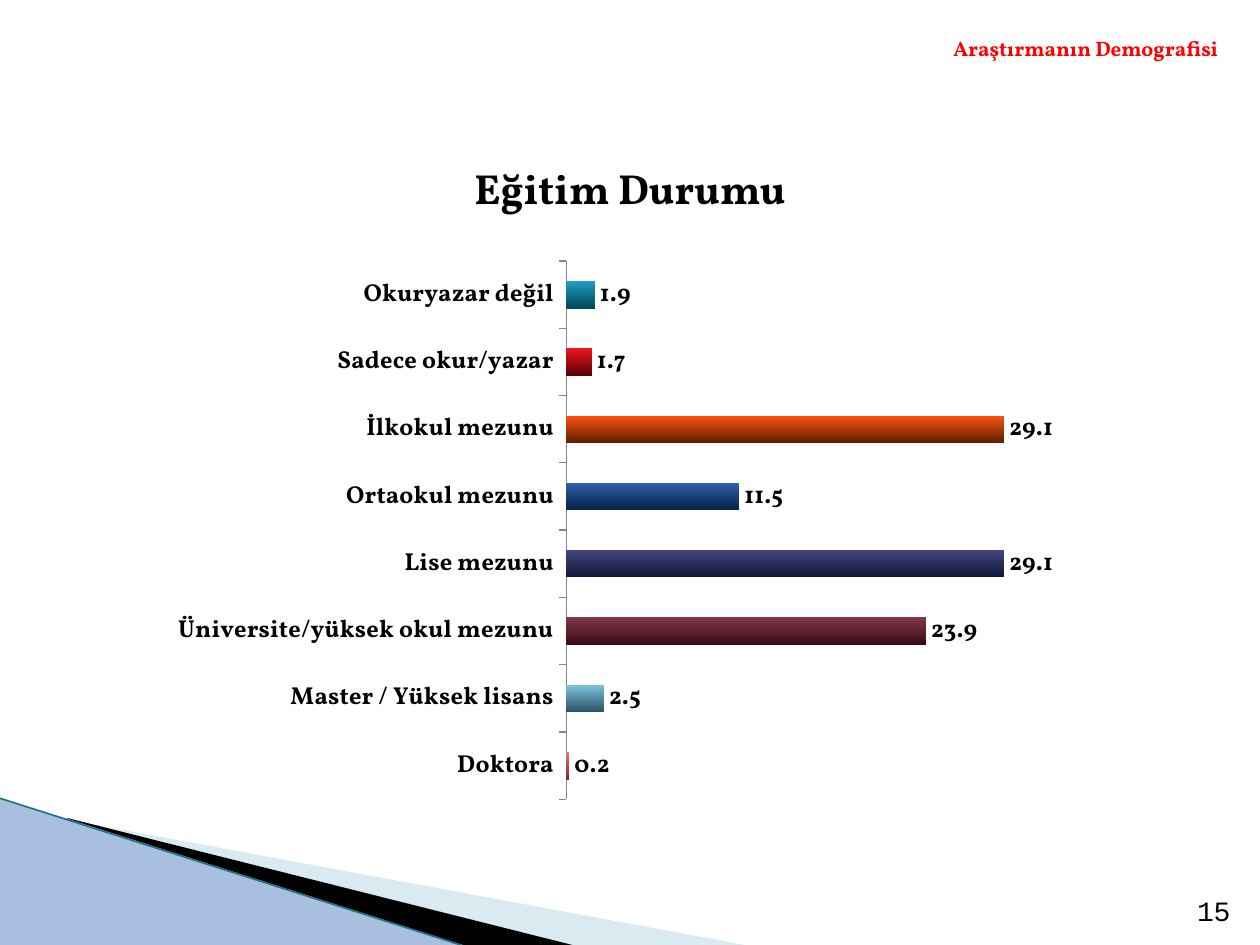
from lxml.etree import SubElement
from pptx import Presentation
from pptx.chart.data import CategoryChartData
from pptx.dml.color import RGBColor
from pptx.enum.chart import XL_CHART_TYPE as ChartType
from pptx.enum.chart import XL_LABEL_POSITION as LabelPosition
from pptx.enum.chart import XL_TICK_MARK as TickMark
from pptx.enum.shapes import MSO_CONNECTOR as Connector
from pptx.enum.shapes import MSO_SHAPE as Shape
from pptx.enum.text import MSO_ANCHOR as Anchor
from pptx.enum.text import PP_ALIGN as Align
from pptx.oxml.ns import qn
from pptx.util import Pt

PX = 7257
SERIF = "Vollkorn"
COLORS = {
    "text": "000000", "header": "FF0000", "axis": "868686",
    "pale": "A0CBDC", "band": "000000", "corner": "A8BFDF", "edge": "1F7388",
}
EDUCATION = [
    ("Okuryazar değil", 1.9, "1FA0C4", "00495A"),
    ("Sadece okur/yazar", 1.7, "EE1520", "5A0005"),
    ("İlkokul mezunu", 29.1, "FF5210", "5E2000"),
    ("Ortaokul mezunu", 11.5, "2F60A8", "02234A"),
    ("Lise mezunu", 29.1, "42467E", "13163A"),
    ("Üniversite/yüksek okul mezunu", 23.9, "803848", "3A0A16"),
    ("Master / Yüksek lisans", 2.5, "7CC4DE", "2C5564"),
    ("Doktora", 0.2, "F07478", "7A2A30"),
]


def px(*lengths):
    """Turn pixel lengths into EMU."""
    return [length * PX for length in lengths]


def rgb(name):
    """Look up a named colour."""
    return RGBColor.from_string(COLORS[name])


def paint(shape, color):
    """Give a shape a plain fill without line or shadow."""
    shape.shadow.inherit = False
    shape.fill.solid()
    shape.fill.fore_color.rgb = rgb(color)
    shape.line.fill.background()


def add_wedge(slide, corners, color, alpha=None):
    """Draw a closed polygon, optionally see-through (alpha in percent)."""
    start, *others = [px(*corner) for corner in corners]
    builder = slide.shapes.build_freeform(*start)
    builder.add_line_segments(others, close=True)
    wedge = builder.convert_to_shape()
    paint(wedge, color)
    if alpha:
        tint = wedge.fill._xPr.find(".//" + qn("a:srgbClr"))
        SubElement(tint, qn("a:alpha")).set("val", str(alpha * 1000))


def add_edge(slide, start, end):
    """Draw the thin line along the corner triangle."""
    edge = slide.shapes.add_connector(Connector.STRAIGHT, *px(*start, *end))
    edge.line.color.rgb = rgb("edge")
    edge.line.width = Pt(0.95)
    SubElement(edge._element.spPr, qn("a:effectLst"))


def add_text(slide, box, text, size, align, anchor=Anchor.TOP,
             font=SERIF, bold=True, color="text"):
    """Add one line of text in a wrapping box."""
    frame = slide.shapes.add_textbox(*px(*box)).text_frame
    frame.word_wrap = True
    frame.vertical_anchor = anchor
    line = frame.paragraphs[0]
    line.alignment = align
    run = line.add_run()
    run.text = text
    run.font.name, run.font.size, run.font.bold = font, Pt(size), bold
    run.font.color.rgb = rgb(color)


def pin_plot(chart, x, y, w, h):
    """Fix the inner plot area to fractions of the chart."""
    area = chart._chartSpace.chart.plotArea
    for old in area.findall(qn("c:layout")):
        area.remove(old)
    layout = area.makeelement(qn("c:layout"))
    area.insert(0, layout)
    manual = SubElement(layout, qn("c:manualLayout"))
    settings = {"layoutTarget": "inner", "xMode": "edge", "yMode": "edge",
                "x": x, "y": y, "w": w, "h": h}
    for tag, value in settings.items():
        SubElement(manual, qn("c:" + tag)).set("val", str(value))


def shade_bar(point, top, bottom):
    """Shade a bar from its top colour down to its bottom colour."""
    fill = point.format.fill
    fill.gradient()
    fill.gradient_angle = 270
    for stop, color in zip(fill.gradient_stops, (top, bottom)):
        stop.color.rgb = RGBColor.from_string(color)


def add_education_chart(slide, box):
    """Add the bar chart of education levels."""
    levels, shares, tops, bottoms = zip(*EDUCATION)
    data = CategoryChartData(number_format="0.0")
    data.categories = levels
    data.add_series("Series 1", shares)
    chart = slide.shapes.add_chart(ChartType.BAR_CLUSTERED, *px(*box), data).chart
    chart.has_legend = chart.has_title = False
    chart.font.name, chart.font.size, chart.font.bold = SERIF, Pt(14), True
    chart.font.color.rgb = rgb("text")
    pin_plot(chart, 0.436, 0.033, 0.531, 0.933)

    level_axis = chart.category_axis
    level_axis.reverse_order = True
    level_axis.major_tick_mark = TickMark.OUTSIDE
    level_axis.format.line.color.rgb = rgb("axis")
    level_axis.format.line.width = Pt(0.75)
    share_axis = chart.value_axis
    share_axis.minimum_scale, share_axis.maximum_scale = 0, 35
    share_axis.has_major_gridlines = False
    share_axis.visible = False

    plot = chart.plots[0]
    plot.vary_by_categories = False
    plot.gap_width = 150
    plot.has_data_labels = True
    labels = plot.data_labels
    labels.show_value = True
    labels.number_format, labels.number_format_is_linked = "0.0", False
    labels.position = LabelPosition.OUTSIDE_END
    for index, (top, bottom) in enumerate(zip(tops, bottoms)):
        shade_bar(plot.series[0].points[index], top, bottom)


def add_corner(slide):
    """Draw the layered wedges in the lower left corner."""
    add_wedge(slide, [(69, 820), (750, 946), (575, 946), (69, 819)], "pale", 40)
    add_wedge(slide, [(67, 818), (576, 946), (469, 947), (68, 819)], "band")
    corner = slide.shapes.add_shape(Shape.RIGHT_TRIANGLE, *px(-1, 798, 469, 149))
    paint(corner, "corner")
    add_edge(slide, (-1, 798), (467, 947))


def main():
    """Build and save the slide."""
    deck = Presentation()
    deck.slide_width, deck.slide_height = px(1260, 945)
    slide = deck.slides.add_slide(deck.slide_layouts[6])
    add_corner(slide)
    add_text(slide, (63, 134, 1134, 108), "Eğitim Durumu", 24,
             Align.CENTER, Anchor.MIDDLE)
    add_text(slide, (108, 29, 1123, 38), "Araştırmanın Demografisi", 12,
             Align.RIGHT, color="header")
    add_text(slide, (1152, 883, 91, 50), "15", 16, Align.RIGHT, Anchor.BOTTOM,
             font="Courier New", bold=False)
    add_education_chart(slide, (134, 242, 992, 577))
    deck.save("out.pptx")


if __name__ == "__main__":
    main()
